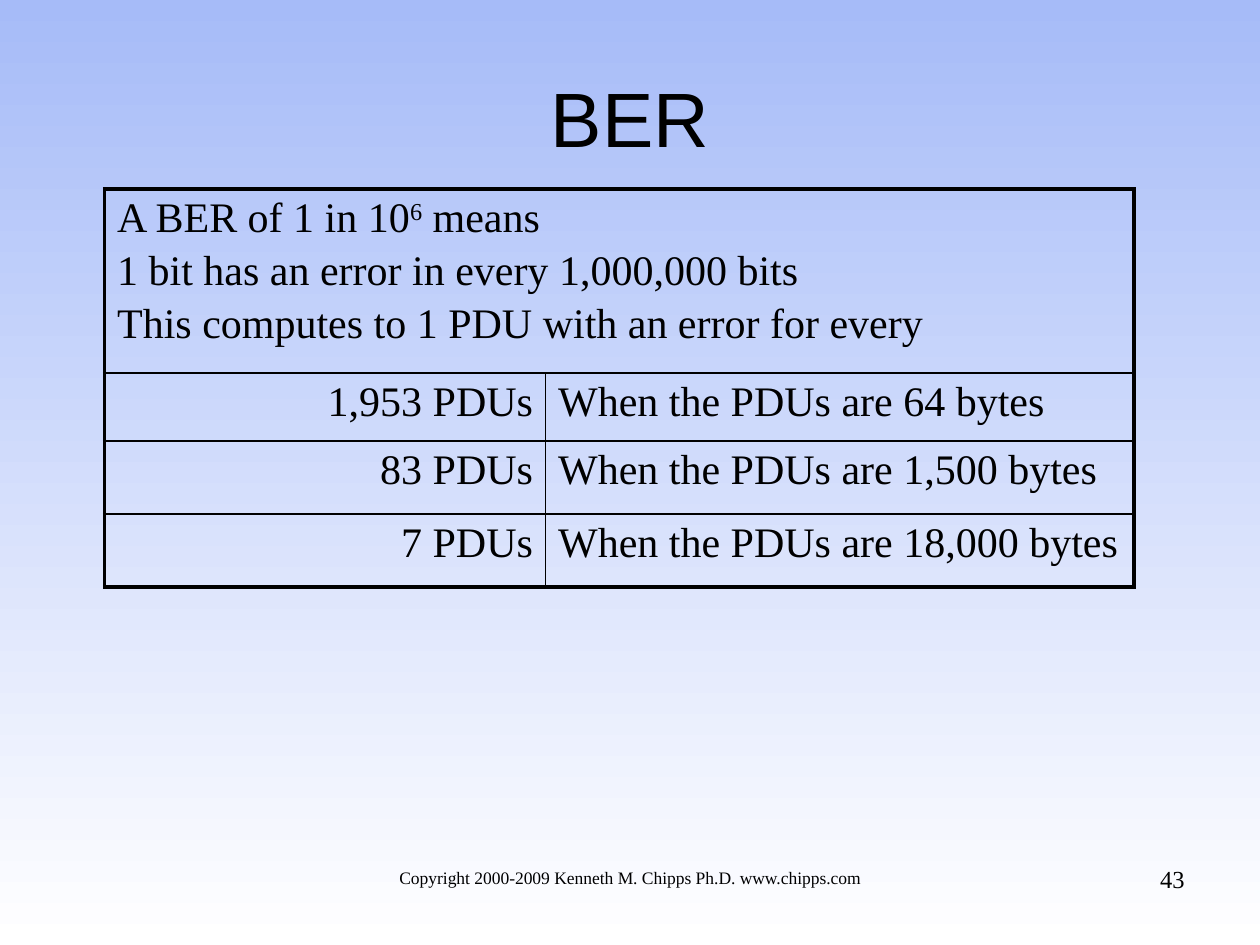
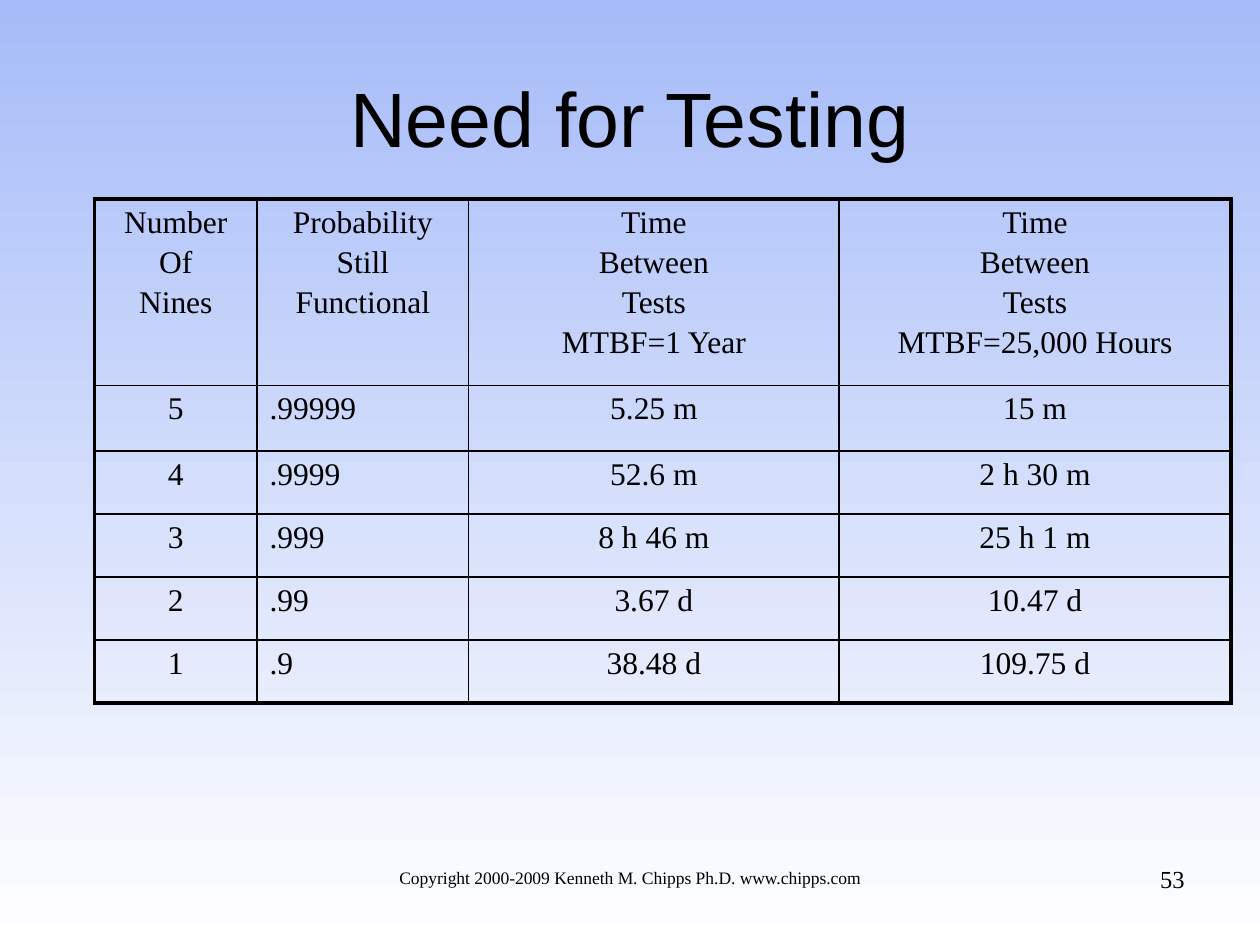
"""Builds two slides on bit error rate and test intervals."""
from dataclasses import dataclass

from lxml import etree
from pptx import Presentation
from pptx import util as u
from pptx.dml import color
from pptx.enum import text
from pptx.oxml import ns

LEFT, CENTER, RIGHT = text.PP_ALIGN.LEFT, text.PP_ALIGN.CENTER, text.PP_ALIGN.RIGHT
COPYRIGHT = "Copyright 2000-2009 Kenneth M. Chipps Ph.D. www.chipps.com"


@dataclass(frozen=True)
class Theme:
    ink: str = "000000"
    sky: str = "A6BBF8"
    white: str = "FFFFFF"
    title_font: str = "Arial"
    body_font: str = "Times New Roman"
    title_size: int = 44
    number_size: int = 14
    footer_size: int = 10
    line_gap: float = 0.16
    frame_width: float = 2.25
    rule_width: float = 1


@dataclass(frozen=True)
class Grid:
    left: float
    top: float
    widths: tuple[float, ...]
    heights: tuple[float, ...]
    aligns: tuple[text.PP_ALIGN, ...]
    size: int
    rows: tuple[tuple[str, ...], ...]
    header_align: text.PP_ALIGN


@dataclass(frozen=True)
class Page:
    title: str
    number: int
    grid: Grid


THEME = Theme()

PAGES = (
    Page("BER", 43, Grid(
        0.83, 1.5, (3.5, 4.67), (1.46, 0.54, 0.58, 0.58), (RIGHT, LEFT), 24,
        (
            ("A BER of 1 in 10^6^ means\n"
             "1 bit has an error in every 1,000,000 bits\n"
             "This computes to 1 PDU with an error for every",),
            ("1,953 PDUs", "When the PDUs are 64 bytes"),
            ("83 PDUs", "When the PDUs are 1,500 bytes"),
            ("7 PDUs", "When the PDUs are 18,000 bytes"),
        ), LEFT)),
    Page("Need for Testing", 53, Grid(
        0.75, 1.58, (1.29, 1.68, 2.94, 3.11), (1.48, 0.52) + (0.5,) * 4,
        (CENTER, LEFT, CENTER, CENTER), 18,
        (
            ("Number\nOf\nNines", "Probability\nStill\nFunctional",
             "Time\nBetween\nTests\nMTBF=1 Year",
             "Time\nBetween\nTests\nMTBF=25,000 Hours"),
            ("5", ".99999", "5.25 m", "15 m"),
            ("4", ".9999", "52.6 m", "2 h 30 m"),
            ("3", ".999", "8 h 46 m", "25 h 1 m"),
            ("2", ".99", "3.67 d", "10.47 d"),
            ("1", ".9", "38.48 d", "109.75 d"),
        ), CENTER)),
)


def write(tf, content: str, *, size: int, align=LEFT, font: str = THEME.body_font) -> None:
    """Write one paragraph per line, raising whatever stands between carets."""
    for i, line in enumerate(content.split("\n")):
        p = tf.add_paragraph() if i else tf.paragraphs[0]
        p.alignment = align
        p.space_before = u.Pt(size * THEME.line_gap if i else 0)
        for j, part in enumerate(line.split("^")):
            r = p.add_run()
            r.text = part
            r.font.name, r.font.size = font, u.Pt(size)
            r.font.color.rgb = color.RGBColor.from_string(THEME.ink)
            if j % 2:
                r.font._element.set("baseline", "30000")


def add_text(s, content: str, left: float, top: float, width: float, height: float, *,
             anchor=text.MSO_ANCHOR.TOP, **style) -> None:
    """Add a wrapping text box."""
    tf = s.shapes.add_textbox(*map(u.Inches, (left, top, width, height))).text_frame
    tf.word_wrap = True
    tf.vertical_anchor = anchor
    write(tf, content, **style)


def add_borders(cell, on_frame: dict[str, bool]) -> None:
    """Rule each side of a cell, heavier where it lies on the table frame."""
    tc_pr = cell._tc.get_or_add_tcPr()
    for side, outer in on_frame.items():
        width = u.Pt(THEME.frame_width if outer else THEME.rule_width)
        ln = etree.SubElement(tc_pr, ns.qn(f"a:ln{side}"), w=str(width))
        fill = etree.SubElement(ln, ns.qn("a:solidFill"))
        etree.SubElement(fill, ns.qn("a:srgbClr"), val=THEME.ink)


def add_grid(s, grid: Grid) -> None:
    """Add a ruled table without fills; a lone first cell spans its row."""
    n_rows, n_cols = len(grid.heights), len(grid.widths)
    size = sum(grid.widths), sum(grid.heights)
    table = s.shapes.add_table(
        n_rows, n_cols, *map(u.Inches, (grid.left, grid.top, *size))).table
    table.first_row = table.horz_banding = False
    for column, width in zip(table.columns, grid.widths):
        column.width = u.Inches(width)
    for row, height in zip(table.rows, grid.heights):
        row.height = u.Inches(height)
    for i, values in enumerate(grid.rows):
        spans = len(values) < n_cols
        if spans:
            table.cell(i, 0).merge(table.cell(i, n_cols - 1))
        for j in range(n_cols):
            cell = table.cell(i, j)
            add_borders(cell, {"L": j == 0, "R": spans or j == n_cols - 1,
                               "T": i == 0, "B": i == n_rows - 1})
            cell.fill.background()
            if j < len(values):
                align = grid.aligns[j] if i else grid.header_align
                write(cell.text_frame, values[j], size=grid.size, align=align)


def add_background(s) -> None:
    """Fade the slide from sky at the top to white."""
    fill = s.background.fill
    fill.gradient()
    fill.gradient_angle = 270
    for position, (stop, rgb) in enumerate(zip(fill.gradient_stops, (THEME.sky, THEME.white))):
        stop.position = position
        stop.color.rgb = color.RGBColor.from_string(rgb)


def add_page(prs, page: Page) -> None:
    """Add a slide with its title, table and footer."""
    s = prs.slides.add_slide(prs.slide_layouts[6])
    add_background(s)
    add_text(s, page.title, 0.5, 0.3, 9, 1.25, anchor=text.MSO_ANCHOR.MIDDLE,
             size=THEME.title_size, align=CENTER, font=THEME.title_font)
    add_grid(s, page.grid)
    add_text(s, COPYRIGHT, 3, 6.83, 4, 0.52, size=THEME.footer_size, align=CENTER)
    add_text(s, str(page.number), 7.17, 6.81, 2.33, 0.52,
             size=THEME.number_size, align=RIGHT)


def main() -> None:
    """Build and save the presentation."""
    prs = Presentation()
    prs.slide_width, prs.slide_height = u.Inches(10), u.Inches(7.5)
    for page in PAGES:
        add_page(prs, page)
    prs.save("out.pptx")


if __name__ == "__main__":
    main()
